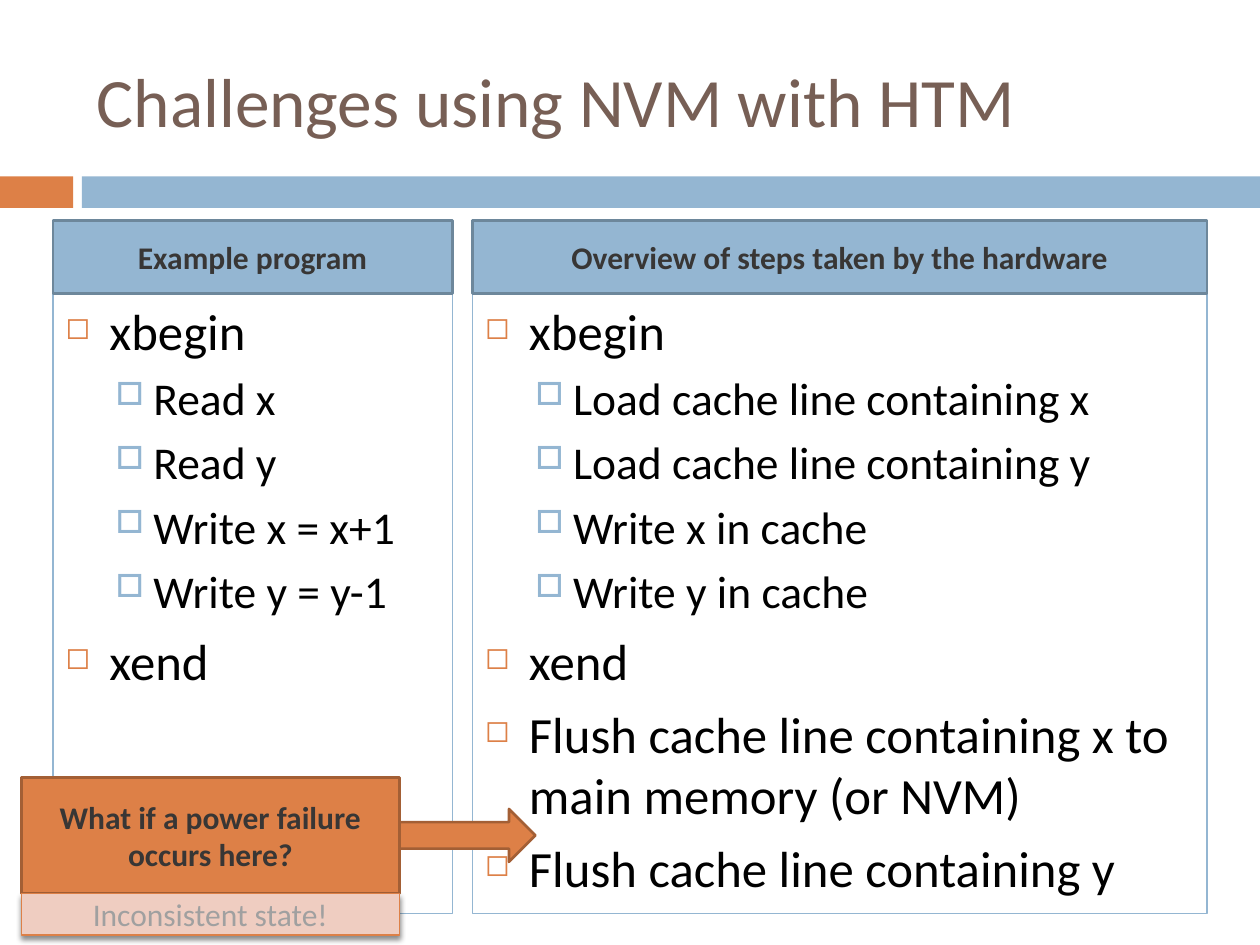
from lxml.etree import SubElement
from pptx import Presentation
from pptx.dml.color import RGBColor
from pptx.enum.shapes import MSO_SHAPE
from pptx.enum.text import MSO_ANCHOR, PP_ALIGN
from pptx.oxml.ns import qn
from pptx.util import Inches, Pt

WHITE = RGBColor(0xFF, 0xFF, 0xFF)
BLACK = RGBColor(0, 0, 0)
BLUE = RGBColor(0x94, 0xB6, 0xD2)
STEEL = RGBColor(0x6D, 0x87, 0x9B)
ORANGE = RGBColor(0xDD, 0x80, 0x47)
RUST = RGBColor(0xA3, 0x5F, 0x35)
PINK = RGBColor(0xEF, 0xCD, 0xC1)
GRAY = RGBColor(0xA0, 0xA0, 0xA0)
DARK = RGBColor(0x38, 0x36, 0x35)
BROWN = RGBColor(0x77, 0x5F, 0x55)
FONT = "Calibri"

TITLE = "Challenges using NVM with HTM"
# Each column: left, width, heading, steps as (level, text)
COLUMNS = [
    (0.42, 3.17, "Example program", [
        (0, "xbegin"),
        (1, "Read x"),
        (1, "Read y"),
        (1, "Write x = x+1"),
        (1, "Write y = y-1"),
        (0, "xend"),
    ]),
    (3.75, 5.83, "Overview of steps taken by the hardware", [
        (0, "xbegin"),
        (1, "Load cache line containing x"),
        (1, "Load cache line containing y"),
        (1, "Write x in cache"),
        (1, "Write y in cache"),
        (0, "xend"),
        (0, "Flush cache line containing x to main memory (or NVM)"),
        (0, "Flush cache line containing y"),
    ]),
]
QUESTION = "What if a power failure occurs here?"
ANSWER = "Inconsistent state!"

# Per level: size, space before, left margin, hang, bullet, colour, percent
LEVELS = [
    (29, 7, 0.35, 0.35, "◻", ORANGE, 60),
    (26, 5.5, 0.7, 0.3, "□", BLUE, 70),
]
HEAD_TOP, HEAD_H, BODY_H = 1.75, 0.58, 4.92
NOTE_X, NOTE_Y, NOTE_W, NOTE_H = 0.17, 6.17, 3, 0.92

deck = Presentation()
deck.slide_width, deck.slide_height = Inches(10), Inches(7.5)
slide = deck.slides.add_slide(deck.slide_layouts[6])
slide.background.fill.solid()
slide.background.fill.fore_color.rgb = WHITE


def style(para, size, color, bold=False):
    font = para.font
    font.name, font.size, font.bold = FONT, Pt(size), bold
    font.color.rgb = color


def box(at, fill=None, line=None, width=1.5, kind=MSO_SHAPE.RECTANGLE):
    shape = slide.shapes.add_shape(kind, *map(Inches, at))
    shape.shadow.inherit = False
    if fill is None:
        shape.fill.background()
    else:
        shape.fill.solid()
        shape.fill.fore_color.rgb = fill
    if line is None:
        shape.line.fill.background()
    else:
        shape.line.color.rgb = line
        shape.line.width = Pt(width)
    return shape


def label(shape, text, color=DARK, bold=True):
    frame = shape.text_frame
    frame.word_wrap = True
    frame.vertical_anchor = MSO_ANCHOR.MIDDLE
    para = frame.paragraphs[0]
    para.text, para.alignment = text, PP_ALIGN.CENTER
    style(para, 18, color, bold)


def bullet(para, level):
    size, space, left, hang, mark, color, share = LEVELS[level]
    para.level, para.alignment = level, PP_ALIGN.LEFT
    para.space_before = Pt(space)
    style(para, size, BLACK)
    props = para._p.get_or_add_pPr()
    props.set("marL", str(Inches(left)))
    props.set("indent", str(-Inches(hang)))
    tint = SubElement(props, qn("a:buClr"))
    SubElement(tint, qn("a:srgbClr"), val=str(color))
    SubElement(props, qn("a:buSzPct"), val=str(share * 1000))
    SubElement(props, qn("a:buChar"), char=mark)
    # The schema wants the default run properties after the bullet
    props.append(props.find(qn("a:defRPr")))


def steps(shape, items):
    frame = shape.text_frame
    frame.word_wrap = True
    frame.vertical_anchor = MSO_ANCHOR.TOP
    for i, (level, text) in enumerate(items):
        para = frame.add_paragraph() if i else frame.paragraphs[0]
        para.text = text
        bullet(para, level)


def drop(shape):
    """Give the shape a soft shadow straight below."""
    effects = shape._element.spPr.find(qn("a:effectLst"))
    shade = SubElement(effects, qn("a:outerShdw"), blurRad=str(Pt(3)),
                       dist=str(Pt(2.4)), dir=str(90 * 60000), rotWithShape="0")
    tint = SubElement(shade, qn("a:srgbClr"), val=str(BLACK))
    SubElement(tint, qn("a:alpha"), val="45000")


box((0, 1.4, 0.58, 0.25), ORANGE)
box((0.65, 1.4, 9.35, 0.25), BLUE)

title = slide.shapes.add_textbox(*map(Inches, (0.67, 0.25, 8.92, 1.08))).text_frame
title.word_wrap = True
title.vertical_anchor = MSO_ANCHOR.MIDDLE
title.text = TITLE
style(title.paragraphs[0], 39.6, BROWN)

for left, width, heading, items in COLUMNS:
    steps(box((left, HEAD_TOP + HEAD_H, width, BODY_H), line=BLUE, width=0.75), items)
    label(box((left, HEAD_TOP, width, HEAD_H), BLUE, STEEL), heading)

box((2.92, 6.42, 1.33, 0.42), ORANGE, RUST, kind=MSO_SHAPE.RIGHT_ARROW)
label(box((NOTE_X, NOTE_Y, NOTE_W, NOTE_H), ORANGE, RUST), QUESTION)
answer = box((NOTE_X, NOTE_Y + NOTE_H, NOTE_W, 0.33), PINK, ORANGE, 0.79)
label(answer, ANSWER, GRAY, bold=False)
drop(answer)

deck.save("out.pptx")
